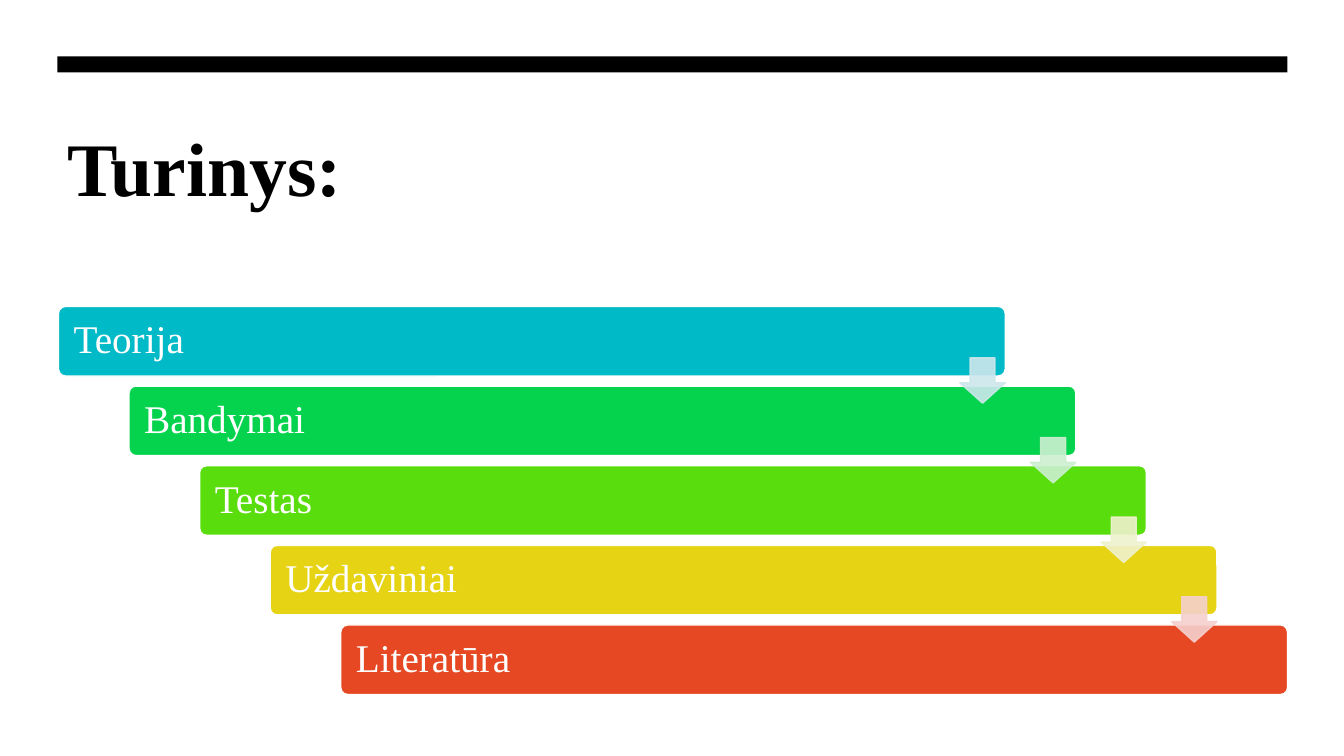
from lxml import etree
from pptx import Presentation
from pptx.dml.color import RGBColor
from pptx.enum.shapes import MSO_SHAPE
from pptx.enum.text import MSO_ANCHOR, PP_ALIGN
from pptx.oxml.ns import qn
from pptx.util import Inches, Pt

COLORS = {
    "black": "000000",
    "white": "FFFFFF",
    "bars": ["00BAC8", "06D34D", "59DD0C", "E6D313", "E64823"],
    "arrows": ["CCE7EB", "CCEFD0", "EFF2CD", "F5D0CD"],
}
FONT = "Times New Roman"
TOPICS = ["Teorija", "Bandymai", "Testas", "Uždaviniai", "Literatūra"]
STEP_X, STEP_Y = 0.7, 0.79


def add_filled(kind, x, y, w, h, fill, line=None):
    sp = s.shapes.add_shape(kind, Inches(x), Inches(y), Inches(w), Inches(h))
    sp.shadow.inherit = False
    sp.fill.solid()
    sp.fill.fore_color.rgb = RGBColor.from_string(fill)
    if line:
        sp.line.color.rgb = RGBColor.from_string(line)
        sp.line.width = Pt(1)
    else:
        sp.line.fill.background()
    return sp


def write(sp, text, size, color, bold=False):
    tf = sp.text_frame
    tf.word_wrap = True
    p = tf.paragraphs[0]
    p.text = text
    p.alignment = PP_ALIGN.LEFT
    p.font.name = FONT
    p.font.size = Pt(size)
    p.font.bold = bold
    p.font.color.rgb = RGBColor.from_string(color)
    return tf


prs = Presentation()
prs.slide_width, prs.slide_height = Inches(13.33), Inches(7.5)
s = prs.slides.add_slide(prs.slide_layouts[6])

title = s.shapes.add_textbox(Inches(0.57), Inches(1.07), Inches(12.2), Inches(1.79))
tf = write(title, "Turinys:", 54, COLORS["black"], bold=True)
tf.margin_top = Inches(0.13)

add_filled(MSO_SHAPE.RECTANGLE, 0.57, 0.56, 12.2, 0.16, COLORS["black"])

for i, (topic, color) in enumerate(zip(TOPICS, COLORS["bars"])):
    bar = add_filled(MSO_SHAPE.ROUNDED_RECTANGLE, 0.58 + i * STEP_X, 3.04 + i * STEP_Y,
                     9.39, 0.69, color, COLORS["white"])
    bar.adjustments[0] = 0.1
    tf = write(bar, topic, 28, COLORS["white"])
    tf.vertical_anchor = MSO_ANCHOR.MIDDLE
    tf.margin_left = tf.margin_right = Inches(0.13)
    tf.margin_top = tf.margin_bottom = Inches(0.12)
    tf.paragraphs[0].line_spacing = 0.9

for i, color in enumerate(COLORS["arrows"]):
    arrow = add_filled(MSO_SHAPE.DOWN_ARROW, 9.52 + i * STEP_X, 3.55 + i * STEP_Y,
                       0.45, 0.45, color, color)
    arrow.adjustments[0] = 0.55
    arrow.adjustments[1] = 0.45
    for clr in arrow.element.spPr.iter(qn("a:srgbClr")):
        etree.SubElement(clr, qn("a:alpha")).set("val", "90000")

prs.save("out.pptx")
